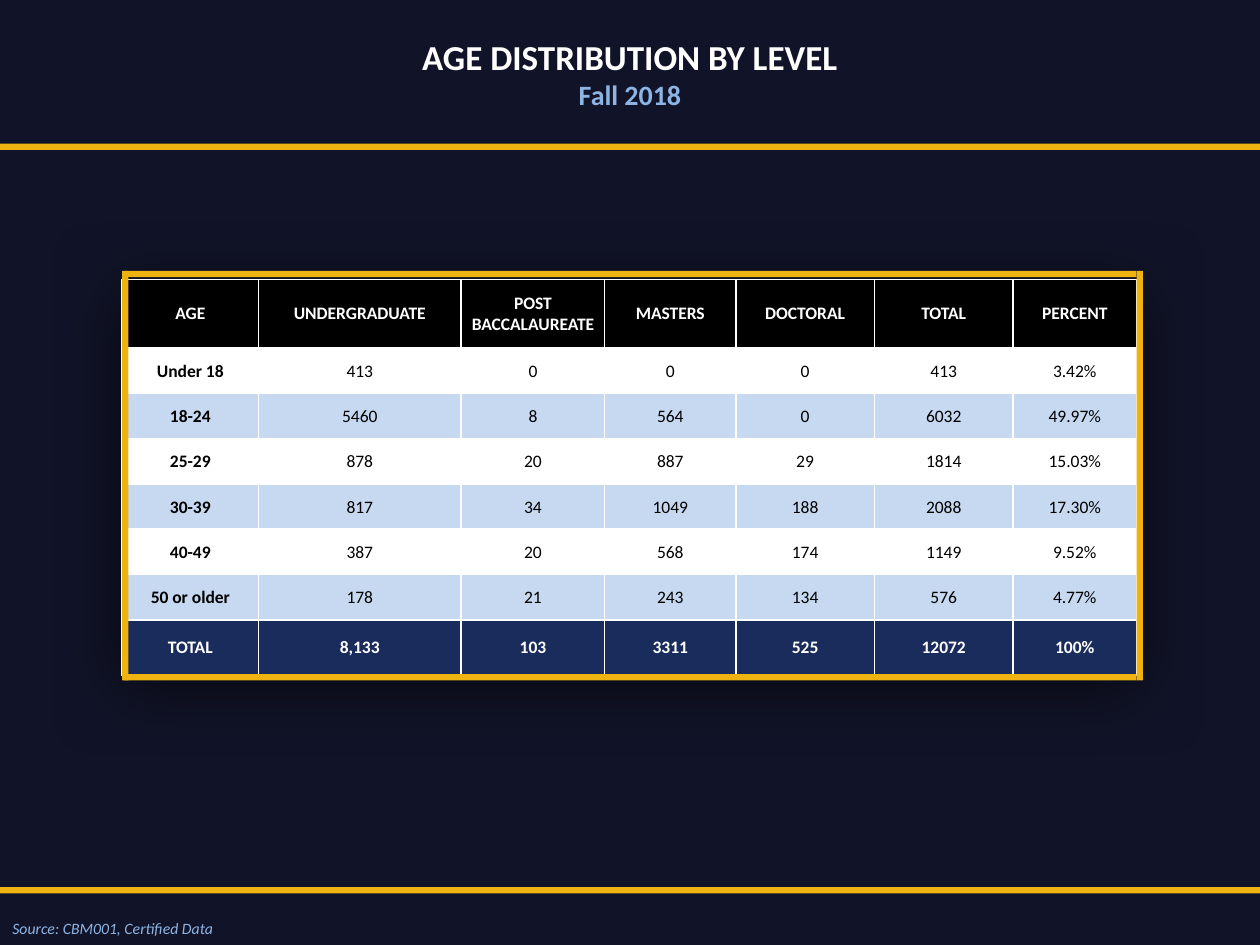
from lxml import etree
from pptx import Presentation
from pptx.dml.color import RGBColor as RGB
from pptx.enum.shapes import MSO_SHAPE as Shape
from pptx.enum.text import MSO_ANCHOR as Anchor, PP_ALIGN as Align
from pptx.util import Inches, Pt

NAVY = RGB(0x11, 0x14, 0x28)
GOLD = RGB(0xEE, 0xB2, 0x11)
SKY = RGB(0x8E, 0xB4, 0xE3)
PALE = RGB(0xC6, 0xD9, 0xF1)
BLUE = RGB(0x1A, 0x2C, 0x5C)
WHITE = RGB(0xFF, 0xFF, 0xFF)
BLACK = RGB(0, 0, 0)

ROWS = [
    ["AGE", "UNDERGRADUATE", "POST BACCALAUREATE", "MASTERS", "DOCTORAL", "TOTAL", "PERCENT"],
    ["Under 18", "413", "0", "0", "0", "413", "3.42%"],
    ["18-24", "5460", "8", "564", "0", "6032", "49.97%"],
    ["25-29", "878", "20", "887", "29", "1814", "15.03%"],
    ["30-39", "817", "34", "1049", "188", "2088", "17.30%"],
    ["40-49", "387", "20", "568", "174", "1149", "9.52%"],
    ["50 or older", "178", "21", "243", "134", "576", "4.77%"],
    ["TOTAL", "8,133", "103", "3311", "525", "12072", "100%"],
]
WIDTHS = [1.08, 1.61, 1.14, 1.04, 1.1, 1.1, 0.98]
HEIGHTS = [0.54] + [0.36] * 6 + [0.44]
SHADOW = """<a:effectLst xmlns:a="http://schemas.openxmlformats.org/drawingml/2006/main">
<a:outerShdw blurRad="508000" dist="76200" dir="5400000" algn="t" rotWithShape="0">
<a:srgbClr val="000000"><a:alpha val="60000"/></a:srgbClr></a:outerShdw></a:effectLst>"""


def write(para, text, size=10, color=BLACK, bold=False, italic=False, align=Align.CENTER):
    para.alignment = align
    run = para.add_run()
    run.text = text
    font = run.font
    font.name, font.size, font.bold, font.italic = "Calibri", Pt(size), bold, italic
    font.color.rgb = color


def add_bar(left, top, width, height):
    bar = slide.shapes.add_shape(Shape.RECTANGLE, Inches(left), Inches(top), Inches(width), Inches(height))
    bar.shadow.inherit = False
    bar.fill.solid()
    bar.fill.fore_color.rgb = GOLD
    bar.line.fill.background()


prs = Presentation()
prs.slide_width, prs.slide_height = Inches(10), Inches(7.5)
slide = prs.slides.add_slide(prs.slide_layouts[6])
back = slide.background.fill
back.solid()
back.fore_color.rgb = NAVY

# Title and term
title = slide.shapes.add_textbox(0, Inches(0.23), Inches(10), Inches(1.01)).text_frame
title.word_wrap = True
write(title.paragraphs[0], "AGE DISTRIBUTION BY LEVEL", size=20, color=WHITE, bold=True)
write(title.add_paragraph(), "Fall 2018", size=16, color=SKY, bold=True)

# Source note
note = slide.shapes.add_textbox(0, Inches(7.24), Inches(1.8), Inches(0.25)).text_frame
note.word_wrap = False
write(note.paragraphs[0], "Source: CBM001, Certified Data", size=9, color=SKY, italic=True, align=Align.LEFT)

# Bands across the slide
for top in (7.04, 1.14):
    add_bar(0, top, 10, 0.05)

# Age table
table = slide.shapes.add_table(len(ROWS), len(WIDTHS), Inches(0.97), Inches(2.22),
                               Inches(sum(WIDTHS)), Inches(sum(HEIGHTS))).table
table._tbl.tblPr.insert(0, etree.fromstring(SHADOW))
for col, width in zip(table.columns, WIDTHS):
    col.width = Inches(width)
last = len(ROWS) - 1
for r, (row, height) in enumerate(zip(ROWS, HEIGHTS)):
    table.rows[r].height = Inches(height)
    edge = r in (0, last)
    fill = {0: BLACK, last: BLUE}.get(r, WHITE if r % 2 else PALE)
    pad = Inches(0.05 if edge else 0.01)
    for c, text in enumerate(row):
        cell = table.cell(r, c)
        cell.fill.solid()
        cell.fill.fore_color.rgb = fill
        cell.vertical_anchor = Anchor.MIDDLE
        cell.margin_left = cell.margin_right = cell.margin_top = pad
        cell.margin_bottom = pad if edge else 0
        write(cell.text_frame.paragraphs[0], text, color=WHITE if edge else BLACK, bold=edge or c == 0)

# Gold frame around the table
for top in (2.15, 5.35):
    add_bar(0.99, top, 8.03, 0.05)
for left in (0.97, 9.02):
    add_bar(left, 2.15, 0.05, 3.25)

prs.save("out.pptx")
